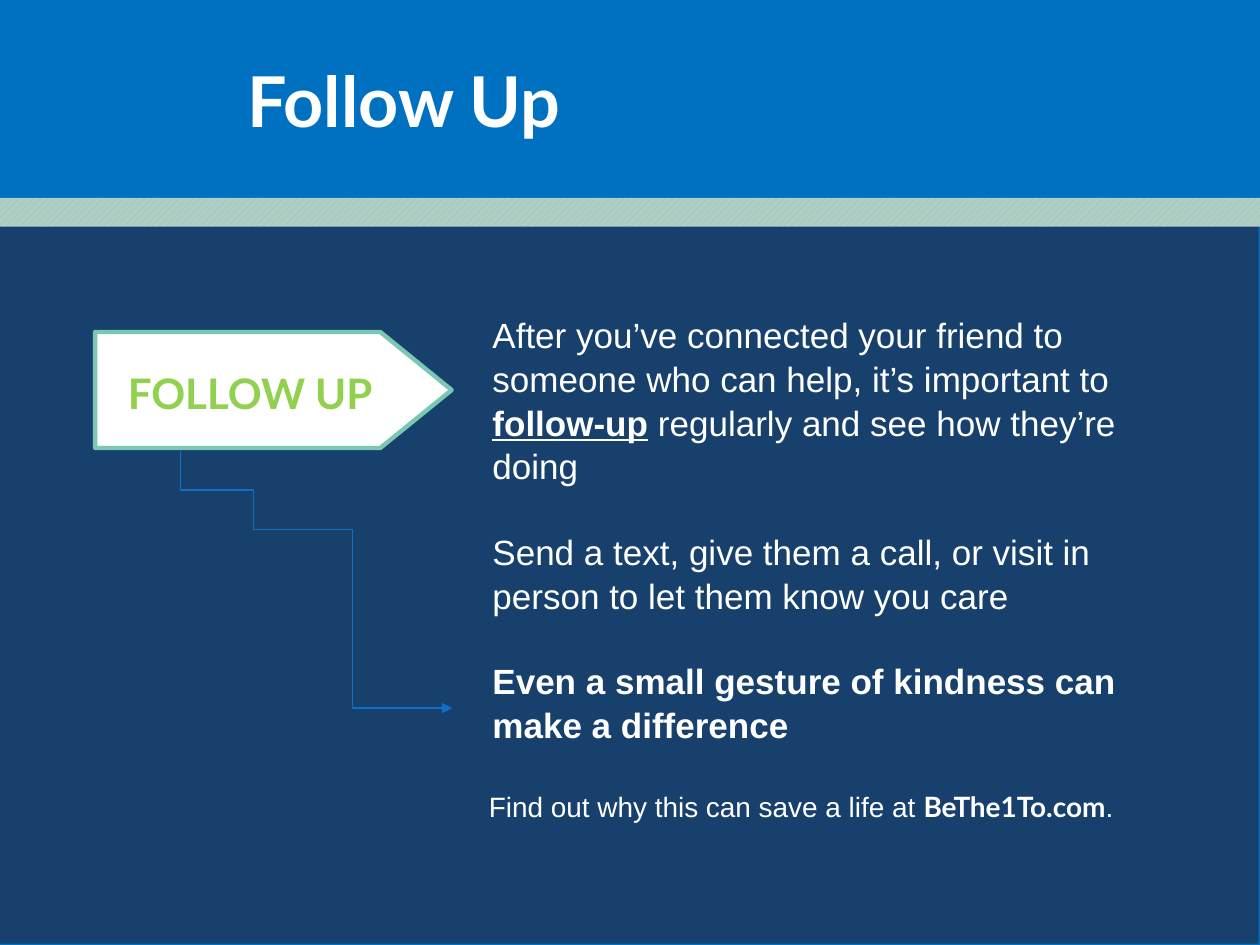
from lxml.etree import SubElement
from pptx import Presentation
from pptx.dml.color import RGBColor
from pptx.enum.dml import MSO_PATTERN
from pptx.enum.shapes import MSO_CONNECTOR, MSO_SHAPE
from pptx.enum.text import MSO_ANCHOR, PP_ALIGN
from pptx.oxml.ns import qn
from pptx.util import Inches, Pt

BLUE = RGBColor(0x00, 0x70, 0xC0)
NAVY = RGBColor(0x17, 0x40, 0x6D)
GREEN = RGBColor(0x92, 0xD0, 0x50)
PALE = RGBColor(0xAF, 0xCD, 0xCD)
TEAL = RGBColor(0x7A, 0xC8, 0xB3)
LINE = RGBColor(0x0F, 0x6F, 0xC6)
WHITE = RGBColor(0xFF, 0xFF, 0xFF)


def set_font(item, size, name="Arial", color=WHITE, bold=False):
    f = item.font
    f.size, f.name, f.bold = Pt(size), name, bold
    f.color.rgb = color


def add_shape(s, kind, *box):
    sp = s.shapes.add_shape(kind, *map(Inches, box))
    sp.shadow.inherit = False
    sp.line.fill.background()
    return sp


def add_text(s, *box):
    tf = s.shapes.add_textbox(*map(Inches, box)).text_frame
    tf.word_wrap = True
    return tf


def add_label(tf, text, size, color):
    tf.text = text
    p = tf.paragraphs[0]
    p.alignment = PP_ALIGN.CENTER
    set_font(p, size, "Lato", color, True)


def add_title(s, text, *box):
    sp = s.shapes.title
    sp.left, sp.top, sp.width, sp.height = map(Inches, box)
    sp.text_frame.vertical_anchor = MSO_ANCHOR.TOP
    add_label(sp.text_frame, text, 40, WHITE)


def add_elbow(s, *ends):
    cx = s.shapes.add_connector(MSO_CONNECTOR.ELBOW, *map(Inches, ends))
    cx.line.color.rgb = LINE
    cx.line.width = Pt(0.75)
    SubElement(cx._element.spPr, qn("a:effectLst"))
    return cx


def add_body(s):
    tf = add_text(s, 3.81, 2.43, 5.55, 3.47)
    paragraphs = [
        ["After you’ve connected your friend to someone who can help, it’s important to ",
         "*follow-up", " regularly and see how they’re doing"],
        ["Send a text, give them a call, or visit in person to let them know you care"],
        ["Even a small gesture of kindness can make a difference"],
    ]
    for i, parts in enumerate(paragraphs):
        p = tf.add_paragraph() if i else tf.paragraphs[0]
        p.line_spacing = 1.04
        if i:
            p.space_before = Pt(24)
        set_font(p, 20, bold=i == 2)
        for part in parts:
            r = p.add_run()
            r.text = part.lstrip("*")
            if part.startswith("*"):
                r.font.bold = r.font.underline = True


def add_footnote(s):
    tf = add_text(s, 3.84, 6.23, 5.67, 0.5)
    tf.margin_left = tf.margin_right = tf.margin_top = tf.margin_bottom = Inches(0.04)
    p = tf.paragraphs[0]
    for text, name in (("Find out why this can save a life at ", "Arial"),
                       ("BeThe1To.com", "Lato"), (".", "Arial")):
        r = p.add_run()
        r.text = text
        set_font(r, 16, name, bold=name == "Lato")


def main():
    prs = Presentation()
    prs.slide_width, prs.slide_height = Inches(10), Inches(7.5)
    s = prs.slides.add_slide(prs.slide_layouts[5])
    s.background.fill.solid()
    s.background.fill.fore_color.rgb = BLUE

    panel = add_shape(s, MSO_SHAPE.RECTANGLE, -0.01, 1.61, 10, 5.88)
    panel.fill.solid()
    panel.fill.fore_color.rgb = NAVY
    add_title(s, "Follow Up", 1.32, 0.41, 3.77, 0.77)

    band = add_shape(s, MSO_SHAPE.RECTANGLE, 0, 1.57, 10, 0.23)
    band.fill.patterned()
    band.fill.pattern = MSO_PATTERN.WIDE_UPWARD_DIAGONAL
    band.fill.fore_color.rgb = GREEN
    band.fill.back_color.rgb = PALE

    tag = add_shape(s, MSO_SHAPE.FLOWCHART_OFFPAGE_CONNECTOR, 1.71, 1.68, 0.92, 2.83)
    tag.rotation = 270
    tag.fill.solid()
    tag.fill.fore_color.rgb = WHITE
    tag.line.color.rgb = TEAL
    tag.line.width = Pt(2.5)
    add_label(add_text(s, 0.72, 2.87, 2.53, 0.5), "FOLLOW UP", 24, GREEN)

    add_body(s)
    add_footnote(s)

    arrow = add_elbow(s, 2.01, 4.2, 3.59, 5.62)
    SubElement(arrow.line._get_or_add_ln(), qn("a:tailEnd"), type="triangle")
    step = add_elbow(s, 2.03, 3.6, 1.41, 4.18)
    step._element.spPr.find(qn("a:xfrm")).set("rot", str(270 * 60000))

    prs.save("out.pptx")


if __name__ == "__main__":
    main()
